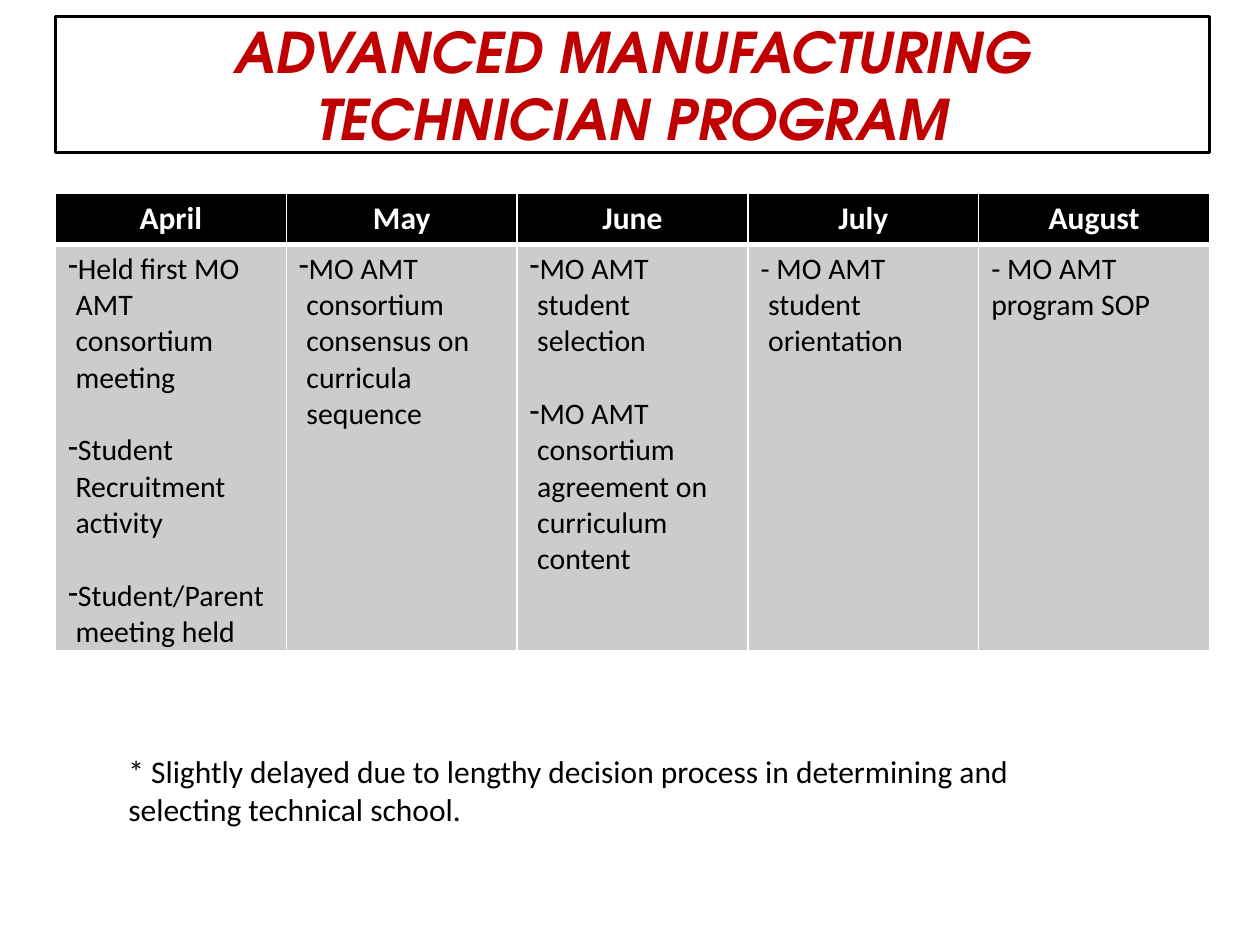
from lxml.etree import SubElement
from pptx import Presentation
from pptx.dml.color import RGBColor
from pptx.enum.text import MSO_ANCHOR, MSO_AUTO_SIZE, PP_ALIGN
from pptx.oxml.ns import qn
from pptx.util import Inches, Pt

TITLE = "ADVANCED MANUFACTURING TECHNICIAN PROGRAM"
NOTE = ("* Slightly delayed due to lengthy decision process in determining "
        "and selecting technical school.")
# Month, activities, bulleted, hanging indent
SCHEDULE = [
    ("April", ["Held first MO AMT consortium meeting",
               "Student Recruitment activity",
               "Student/Parent meeting held"], True, 0.06),
    ("May", ["MO AMT consortium consensus on curricula sequence"], True, 0.06),
    ("June", ["MO AMT student selection",
              "MO AMT consortium agreement on curriculum content"], True, 0.06),
    ("July", ["- MO AMT student orientation"], False, 0.06),
    ("August", ["- MO AMT program SOP"], False, 0),
]
HEADER_HEIGHT = 0.41
ACTIVITY_SIZE = 17
ACTIVITY_GAP = 20.75  # one line of activity text


def color(hex_string):
    return RGBColor.from_string(hex_string)


def set_font(paragraph, name, size, hex_string, bold=False, italic=False):
    font = paragraph.font
    font.name, font.size = name, Pt(size)
    font.bold, font.italic = bold, italic
    font.color.rgb = color(hex_string)


def set_hanging_indent(paragraph, indent, bulleted):
    properties = paragraph._p.get_or_add_pPr()
    properties.set("marL", str(Inches(indent)))
    properties.set("indent", str(-Inches(indent)))
    if bulleted:
        bullet = SubElement(properties, qn("a:buChar"))
        bullet.set("char", "-")


def format_cell(cell, fill, top, bottom):
    """Fill the cell and give it white borders, 1 pt at the sides."""
    properties = cell._tc.get_or_add_tcPr()
    for side, width in (("L", 1), ("R", 1), ("T", top), ("B", bottom)):
        line = SubElement(properties, qn(f"a:ln{side}"), w=str(Pt(width)))
        solid = SubElement(line, qn("a:solidFill"))
        SubElement(solid, qn("a:srgbClr"), val="FFFFFF")
    cell.fill.solid()
    cell.fill.fore_color.rgb = color(fill)


def add_title(slide, left, top, width, height):
    title = slide.shapes.title
    title.left, title.top = Inches(left), Inches(top)
    title.width, title.height = Inches(width), Inches(height)
    title.fill.solid()
    title.fill.fore_color.rgb = color("FFFFFF")
    title.line.color.rgb = color("000000")
    title.line.width = Pt(2)
    frame = title.text_frame
    frame.text = TITLE
    frame.auto_size = MSO_AUTO_SIZE.NONE
    frame.vertical_anchor = MSO_ANCHOR.MIDDLE
    paragraph = frame.paragraphs[0]
    paragraph.alignment = PP_ALIGN.CENTER
    set_font(paragraph, "TeX Gyre Adventor", 32, "C00000", bold=True, italic=True)


def fill_header(cell, month):
    format_cell(cell, "000000", top=1, bottom=3)
    cell.text = month
    paragraph = cell.text_frame.paragraphs[0]
    paragraph.alignment = PP_ALIGN.CENTER
    set_font(paragraph, "Calibri", 18, "FFFFFF", bold=True)


def fill_activities(cell, activities, bulleted, indent):
    format_cell(cell, "CCCCCC", top=3, bottom=1)
    cell.margin_bottom = 0
    cell.text = "\n".join(activities)
    for index, paragraph in enumerate(cell.text_frame.paragraphs):
        if index:
            paragraph.space_before = Pt(ACTIVITY_GAP)
        set_hanging_indent(paragraph, indent, bulleted)
        set_font(paragraph, "Calibri", ACTIVITY_SIZE, "000000")


def add_schedule(slide, left, top, width, height):
    table = slide.shapes.add_table(
        2, len(SCHEDULE), Inches(left), Inches(top), Inches(width), Inches(height)
    ).table
    table.rows[0].height = Inches(HEADER_HEIGHT)
    table.rows[1].height = Inches(height - HEADER_HEIGHT)
    for column, (month, activities, bulleted, indent) in enumerate(SCHEDULE):
        fill_header(table.cell(0, column), month)
        fill_activities(table.cell(1, column), activities, bulleted, indent)


def add_note(slide, left, top, width, height):
    note = slide.shapes.add_textbox(
        Inches(left), Inches(top), Inches(width), Inches(height))
    frame = note.text_frame
    frame.word_wrap = True
    frame.auto_size = MSO_AUTO_SIZE.SHAPE_TO_FIT_TEXT
    frame.text = NOTE
    set_font(frame.paragraphs[0], "Calibri", 18, "000000")


def main():
    presentation = Presentation()
    presentation.slide_width, presentation.slide_height = Inches(10), Inches(7.5)
    slide = presentation.slides.add_slide(presentation.slide_layouts[5])
    add_title(slide, 0.44, 0.13, 9.16, 1.08)
    add_schedule(slide, 0.44, 1.53, 9.16, 3.62)
    add_note(slide, 0.92, 5.92, 7.92, 0.71)
    presentation.save("out.pptx")


if __name__ == "__main__":
    main()
